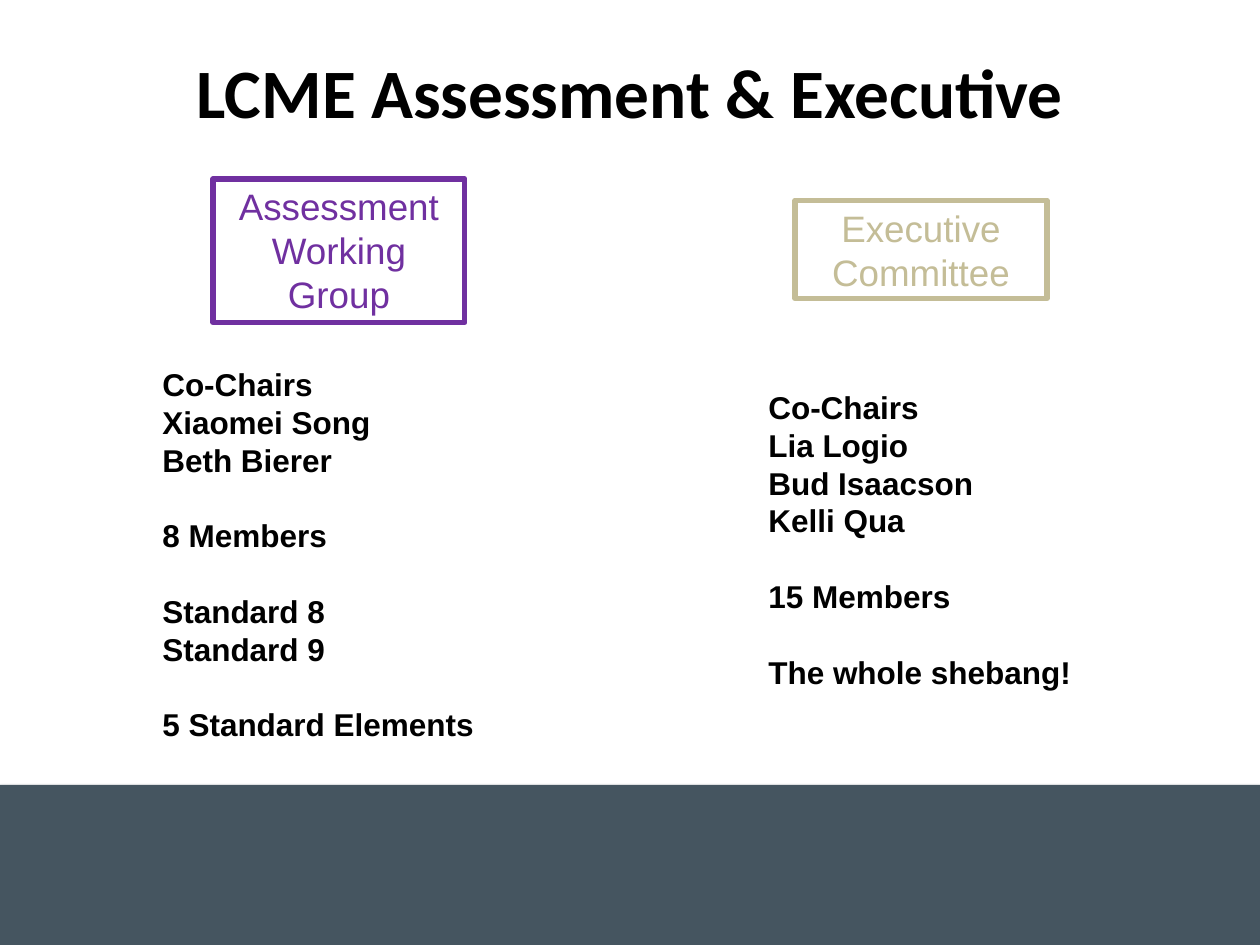
from pptx import Presentation
from pptx.dml.color import RGBColor
from pptx.enum import shapes, text
from pptx.oxml import parse_xml
from pptx.oxml.ns import nsdecls
from pptx.util import Inches, Pt

BLACK, SLATE, PURPLE, TAN = "000000", "455560", "7030A0", "C4BD97"
LINE_GAP = Pt(21.6)  # one line of body text


def color(hex_string):
    return RGBColor.from_string(hex_string)


def set_font(paragraph, name, size, hex_string, bold=False):
    font = paragraph.font
    font.name, font.size, font.bold = name, Pt(size), bold
    font.color.rgb = color(hex_string)


def add_footer_band(slide, left, top, width, height):
    band = slide.shapes.add_shape(shapes.MSO_SHAPE.RECTANGLE, Inches(left),
                                  Inches(top), Inches(width), Inches(height))
    band.shadow.inherit = False
    band.fill.solid()
    band.fill.fore_color.rgb = color(SLATE)
    band.line.fill.background()
    # Soft shadow along the edge of the band
    effects = band._element.spPr.find(
        "{http://schemas.openxmlformats.org/drawingml/2006/main}effectLst")
    effects.append(parse_xml(
        f'<a:outerShdw {nsdecls("a")} blurRad="39370" dist="22860" dir="5400000" '
        'rotWithShape="0"><a:srgbClr val="000000"><a:alpha val="35000"/>'
        '</a:srgbClr></a:outerShdw>'))


def add_title(slide, left, top, width, height):
    title = slide.shapes.add_textbox(Inches(left), Inches(top),
                                     Inches(width), Inches(height))
    frame = title.text_frame
    frame.word_wrap = True
    frame.vertical_anchor = text.MSO_ANCHOR.MIDDLE
    heading = frame.paragraphs[0]
    heading.text = "LCME Assessment & Executive"
    heading.alignment = text.PP_ALIGN.CENTER
    set_font(heading, "Calibri", 39.6, BLACK, bold=True)


def add_group_name(slide, name, hex_string, left, top, width, height):
    box = slide.shapes.add_shape(shapes.MSO_SHAPE.RECTANGLE, Inches(left),
                                 Inches(top), Inches(width), Inches(height))
    box.shadow.inherit = False
    box.fill.background()
    box.line.color.rgb = color(hex_string)
    box.line.width = Pt(3)
    frame = box.text_frame
    frame.word_wrap = True
    frame.vertical_anchor = text.MSO_ANCHOR.TOP
    frame.margin_left = frame.margin_right = Inches(0.07)
    frame.margin_top = frame.margin_bottom = Inches(0.04)
    label = frame.paragraphs[0]
    label.text = name
    label.alignment = text.PP_ALIGN.CENTER
    set_font(label, "Arial", 21, hex_string)


def add_details(slide, blocks, left, top, width, height):
    """Each block is a list of lines; blocks are one line apart."""
    details = slide.shapes.add_textbox(Inches(left), Inches(top),
                                       Inches(width), Inches(height))
    frame = details.text_frame
    frame.word_wrap = True
    for block_index, block in enumerate(blocks):
        for line_index, line in enumerate(block):
            first = block_index == line_index == 0
            paragraph = frame.paragraphs[0] if first else frame.add_paragraph()
            paragraph.text = line
            if block_index and line_index == 0:
                paragraph.space_before = LINE_GAP
            set_font(paragraph, "Arial", 18, BLACK, bold=True)


def main():
    prs = Presentation()
    prs.slide_width, prs.slide_height = Inches(10), Inches(7.5)
    slide = prs.slides.add_slide(prs.slide_layouts[6])

    add_footer_band(slide, 0, 6.23, 10, 1.27)
    add_title(slide, 0.69, 0.32, 8.62, 0.8)

    # Assessment column
    add_group_name(slide, "Assessment Working Group", PURPLE, 1.69, 1.42, 2, 1.14)
    add_details(slide, [["Co-Chairs", "Xiaomei Song", "Beth Bierer"],
                        ["8 Members"],
                        ["Standard 8", "Standard 9"],
                        ["5 Standard Elements"]], 1.19, 2.85, 3, 3.13)

    # Executive column
    add_group_name(slide, "Executive Committee", TAN, 6.31, 1.59, 2, 0.78)
    add_details(slide, [["Co-Chairs", "Lia Logio", "Bud Isaacson", "Kelli Qua"],
                        ["15 Members"],
                        ["The whole shebang!"]], 6, 3.03, 2.63, 2.52)

    prs.save("out.pptx")


if __name__ == "__main__":
    main()
